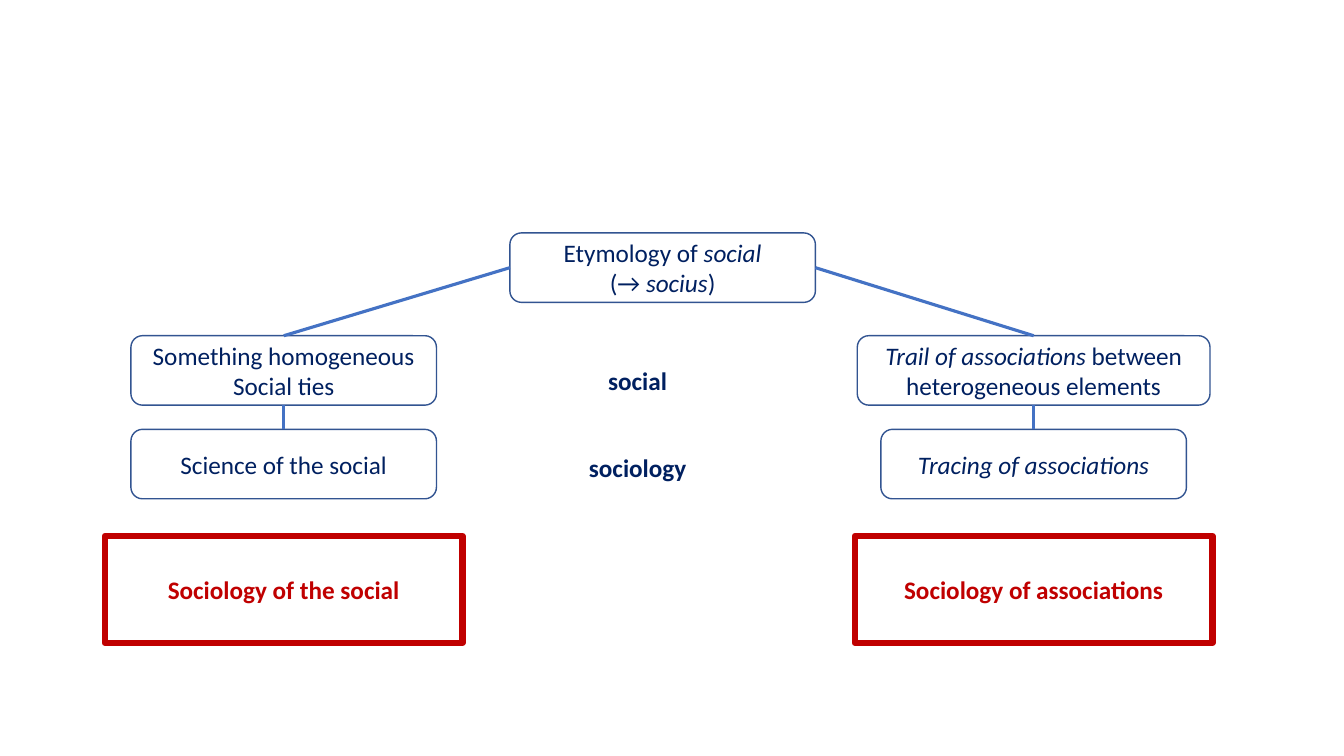
"""Build a slide that contrasts two branches of sociology from the etymology of social."""
from lxml.etree import SubElement
from pptx import Presentation
from pptx.dml.color import RGBColor
from pptx.enum.shapes import MSO_CONNECTOR, MSO_SHAPE
from pptx.enum.text import MSO_ANCHOR, PP_ALIGN
from pptx.oxml.ns import qn
from pptx.util import Cm, Pt

COLORS = {"paper": "FFFFFF", "ink": "002060", "outline": "325491",
          "link": "4472C4", "accent": "C00000"}
FONT = "Calibri"
LEFT, LABEL, MIDDLE, RIGHT = 7.15, 16.07, 16.7, 26.05
TOP, SOCIAL, SOCIOLOGY, RESULT = 5.87, 8.46, 10.82, 13.51
NODE_WIDTH, NODE_HEIGHT = 7.7, 1.75
RESULT_WIDTH, RESULT_HEIGHT = 9.02, 2.69
LABEL_WIDTH, LABEL_HEIGHT = 4.55, 1.02
ITALIC_MARK = "*"

NODES = {
    "etymology": (["Etymology of *social*", "(→ *socius*)"], MIDDLE, TOP, NODE_WIDTH),
    "ties": (["Something homogeneous", "Social ties"], LEFT, SOCIAL, NODE_WIDTH),
    "trail": (["*Trail of associations* between heterogeneous elements"], RIGHT, SOCIAL, 8.89),
    "science": (["Science of the social"], LEFT, SOCIOLOGY, NODE_WIDTH),
    "tracing": (["*Tracing of associations*"], RIGHT, SOCIOLOGY, NODE_WIDTH),
}
SIDE_TOP, SIDE_LEFT, SIDE_BOTTOM, SIDE_RIGHT = range(4)
LINKS = [
    ("etymology", SIDE_LEFT, "ties"),
    ("etymology", SIDE_RIGHT, "trail"),
    ("ties", SIDE_BOTTOM, "science"),
    ("trail", SIDE_BOTTOM, "tracing"),
]
LABELS = [("social", 9.09), ("sociology", 11.28)]
RESULTS = [("Sociology of the social", LEFT), ("Sociology of associations", RIGHT)]


def color(key):
    return RGBColor.from_string(COLORS[key])


def write(holder, lines, *, ink="ink", bold=False, anchor=MSO_ANCHOR.MIDDLE):
    frame = holder.text_frame
    frame.word_wrap = True
    frame.vertical_anchor = anchor
    for number, line in enumerate(lines):
        paragraph = frame.add_paragraph() if number else frame.paragraphs[0]
        paragraph.alignment = PP_ALIGN.CENTER
        for position, words in enumerate(line.split(ITALIC_MARK)):
            if words:
                run = paragraph.add_run()
                run.text = words
                run.font.name = FONT
                run.font.size = Pt(18)
                run.font.bold = bold
                run.font.italic = position % 2 == 1
                run.font.color.rgb = color(ink)


def bounds(center, top, width, height):
    return Cm(center - width / 2), Cm(top), Cm(width), Cm(height)


def add_box(slide, kind, place, outline, weight):
    box = slide.shapes.add_shape(kind, *place)
    box.shadow.inherit = False
    box.fill.solid()
    box.fill.fore_color.rgb = color("paper")
    box.line.color.rgb = color(outline)
    box.line.width = Pt(weight)
    return box


def add_link(slide, parent, side, child):
    link = slide.shapes.add_connector(MSO_CONNECTOR.STRAIGHT, 0, 0, 0, 0)
    link.begin_connect(parent, side)
    link.end_connect(child, SIDE_TOP)
    link.line.color.rgb = color("link")
    link.line.width = Pt(2.25)
    SubElement(link._element.spPr, qn("a:effectLst"))


def main():
    deck = Presentation()
    deck.slide_width, deck.slide_height = Cm(33.87), Cm(19.05)
    slide = deck.slides.add_slide(deck.slide_layouts[6])

    nodes = {}
    for key, (lines, center, top, width) in NODES.items():
        place = bounds(center, top, width, NODE_HEIGHT)
        nodes[key] = add_box(slide, MSO_SHAPE.ROUNDED_RECTANGLE, place, "outline", 1)
        write(nodes[key], lines)

    for parent, side, child in LINKS:
        add_link(slide, nodes[parent], side, nodes[child])

    for word, top in LABELS:
        label = slide.shapes.add_textbox(*bounds(LABEL, top, LABEL_WIDTH, LABEL_HEIGHT))
        write(label, [word], bold=True, anchor=MSO_ANCHOR.TOP)

    for conclusion, center in RESULTS:
        place = bounds(center, RESULT, RESULT_WIDTH, RESULT_HEIGHT)
        result = add_box(slide, MSO_SHAPE.RECTANGLE, place, "accent", 4.5)
        write(result, [conclusion], ink="accent", bold=True)

    deck.save("out.pptx")


if __name__ == "__main__":
    main()
